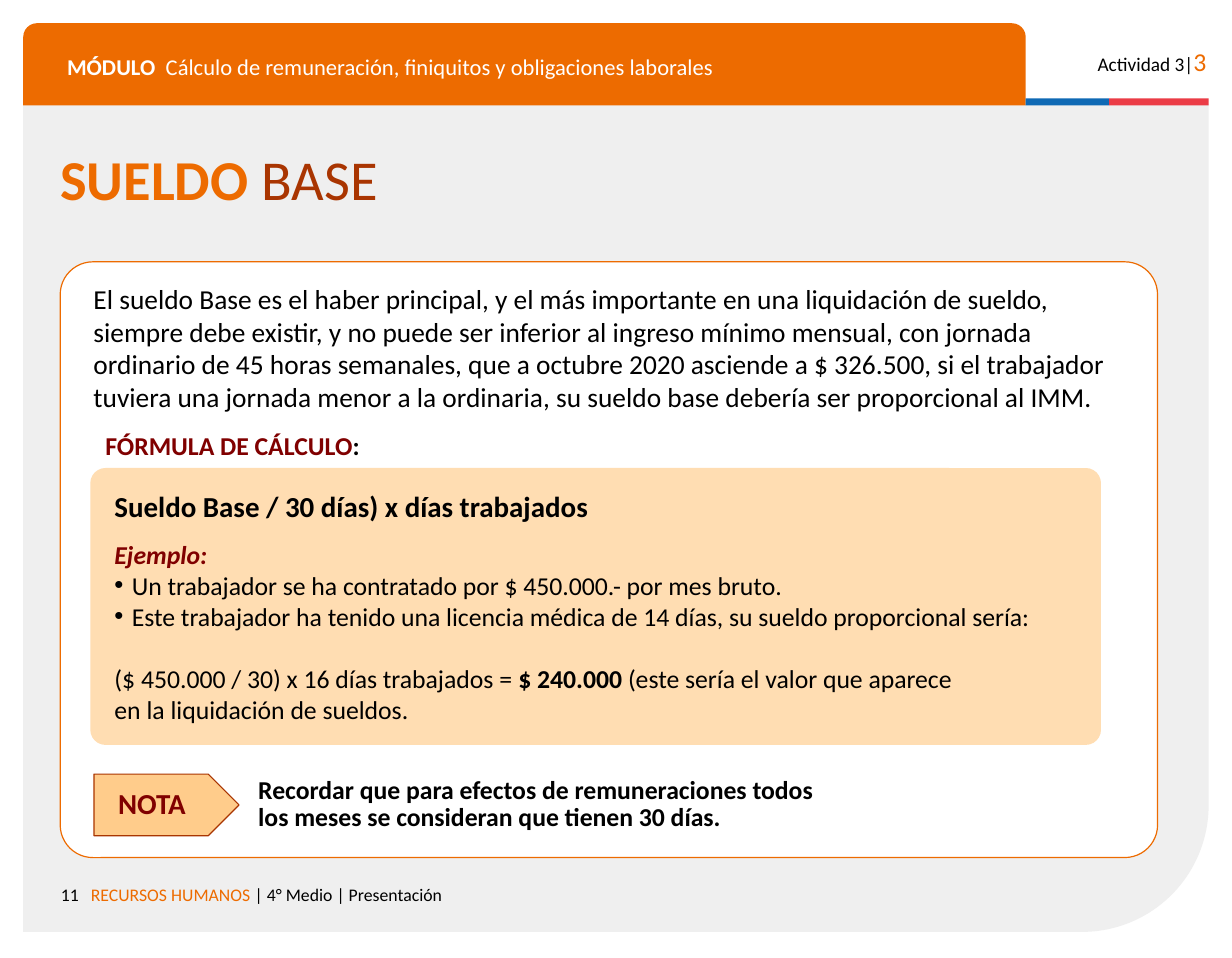
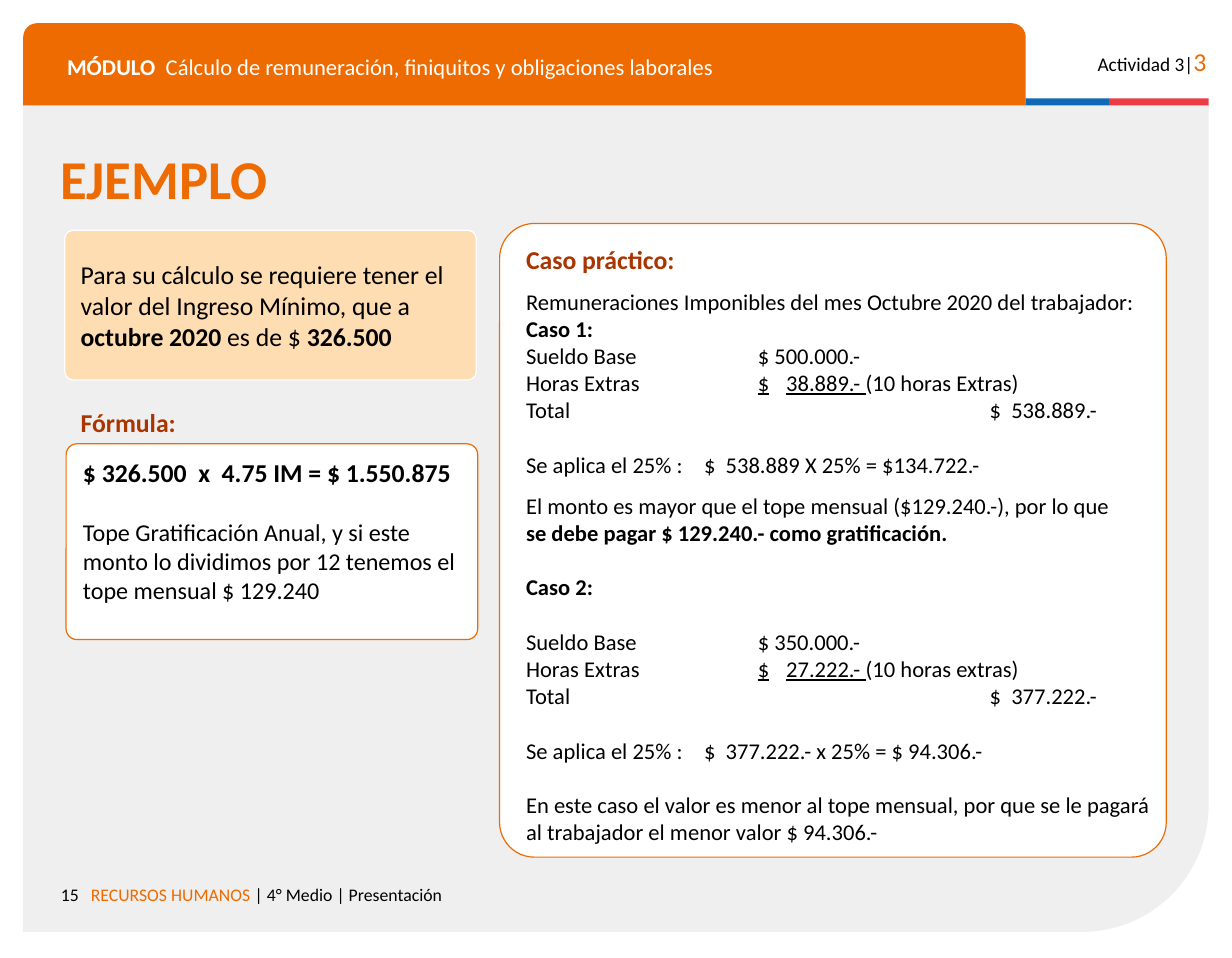
from dataclasses import dataclass

from lxml import etree
from pptx import Presentation
from pptx.dml.color import RGBColor
from pptx.enum.shapes import MSO_SHAPE
from pptx.enum.text import MSO_ANCHOR, PP_ALIGN
from pptx.oxml.ns import qn
from pptx.util import Cm, Pt

RECTANGLE = MSO_SHAPE.RECTANGLE
ROUNDED = MSO_SHAPE.ROUNDED_RECTANGLE
ONE_ROUND_CORNER = MSO_SHAPE.ROUND_1_RECTANGLE
TWO_ROUND_CORNERS = MSO_SHAPE.ROUND_2_SAME_RECTANGLE
PENTAGON = MSO_SHAPE.PENTAGON
LEFT, RIGHT = PP_ALIGN.LEFT, PP_ALIGN.RIGHT
TOP, MIDDLE = MSO_ANCHOR.TOP, MSO_ANCHOR.MIDDLE

FONT = "Calibri"
COLORS = {
    "black": "000000", "white": "FFFFFF", "gray": "EFEFEF",
    "orange": "ED6B00", "rust": "A93501", "maroon": "800000",
    "peach": "FFDDB2", "apricot": "FFCC8B", "blue": "0F69B4", "red": "EB3C46",
}
BREAK = "\n"
BULLET_INDENT = 0.38
PANEL_CORNER = 0.055
AMOUNT_STOP, DIGITS_STOP, RATE_STOP, TOTAL_STOP = 5.08, 5.7, 3.9, 10.16


@dataclass(frozen=True)
class Box:
    left: float
    top: float
    width: float
    height: float

    def lengths(self) -> tuple:
        return Cm(self.left), Cm(self.top), Cm(self.width), Cm(self.height)


@dataclass(frozen=True)
class Run:
    text: str
    size: float = 16
    color: str = "black"
    bold: bool = False
    italic: bool = False
    underline: bool = False


@dataclass(frozen=True)
class Line:
    runs: tuple
    before: float = 0
    spacing: float = 1
    align: int = LEFT
    bullet: bool = False
    stops: tuple = ()


@dataclass(frozen=True)
class Figure:
    kind: int
    box: Box
    fill: str
    line: str = ""
    adjustments: tuple = ()
    flipped: bool = False


@dataclass(frozen=True)
class Case:
    base: str
    extras: str
    extras_note: str
    total: str
    rate: str
    before: float = 0


# Drawing
def add_figure(slide, figure: Figure) -> None:
    shape = slide.shapes.add_shape(figure.kind, *figure.box.lengths())
    shape.shadow.inherit = False
    shape.fill.solid()
    shape.fill.fore_color.rgb = RGBColor.from_string(COLORS[figure.fill])
    if figure.line:
        shape.line.color.rgb = RGBColor.from_string(COLORS[figure.line])
        shape.line.width = Pt(0.75)
    else:
        shape.line.fill.background()
    for index, value in enumerate(figure.adjustments):
        shape.adjustments[index] = value
    if figure.flipped:
        shape._element.spPr.xfrm.set("flipV", "1")


def add_panel(slide, box: Box, fill: str, line: str = "") -> None:
    add_figure(slide, Figure(ROUNDED, box, fill, line, (PANEL_CORNER,)))


def add_run(paragraph, item: Run) -> None:
    run = paragraph.add_run()
    run.text = item.text
    font = run.font
    font.name, font.size = FONT, Pt(item.size)
    font.bold, font.italic, font.underline = item.bold, item.italic, item.underline
    font.color.rgb = RGBColor.from_string(COLORS[item.color])


def format_paragraph(paragraph, line: Line) -> None:
    paragraph.alignment = line.align
    paragraph.line_spacing = line.spacing
    paragraph.space_before = Pt(line.before)
    properties = paragraph._p.get_or_add_pPr()
    if line.bullet:
        properties.set("marL", str(Cm(BULLET_INDENT)))
        properties.set("indent", str(-Cm(BULLET_INDENT)))
        etree.SubElement(properties, qn("a:buFont"), typeface="Arial")
        etree.SubElement(properties, qn("a:buChar"), char="•")
    if line.stops:
        tabs = etree.SubElement(properties, qn("a:tabLst"))
        for stop in line.stops:
            etree.SubElement(tabs, qn("a:tab"), pos=str(Cm(stop)), algn="l")


def add_text(slide, box: Box, *lines: Line, inset: float = 0.13, anchor: int = TOP) -> None:
    frame = slide.shapes.add_textbox(*box.lengths()).text_frame
    frame.word_wrap = True
    frame.vertical_anchor = anchor
    frame.margin_left = frame.margin_right = Cm(0.25)
    frame.margin_top = frame.margin_bottom = Cm(inset)
    for index, line in enumerate(lines):
        paragraph = frame.add_paragraph() if index else frame.paragraphs[0]
        format_paragraph(paragraph, line)
        for item in line.runs:
            if item.text == BREAK:
                paragraph.add_line_break()
            else:
                add_run(paragraph, item)


# Shared page: background, header band, footer and title
FRAME = (
    Figure(ONE_ROUND_CORNER, Box(0.51, 2.29, 25.98, 18.14), "gray",
           adjustments=(0.153,), flipped=True),
    Figure(TWO_ROUND_CORNERS, Box(0.51, 0.51, 21.97, 1.8), "orange", adjustments=(0.167, 0)),
    Figure(RECTANGLE, Box(22.48, 2.16, 1.83, 0.15), "blue"),
    Figure(RECTANGLE, Box(24.31, 2.16, 2.18, 0.15), "red"),
)


def add_page(presentation, number: int, *title: Run):
    slide = presentation.slides.add_slide(presentation.slide_layouts[6])
    for figure in FRAME:
        add_figure(slide, figure)
    add_text(slide, Box(0.51, 19.13, 1.47, 0.74),
             Line((Run(str(number), 11),), align=RIGHT), inset=0.25)
    add_text(slide, Box(1.74, 19.13, 17, 0.97),
             Line((Run("RECURSOS HUMANOS ", 11, "orange"),
                   Run("| 4° Medio | Presentación", 11))), inset=0.25)
    add_text(slide, Box(23.44, 0.76, 3.25, 0.97),
             Line((Run("Actividad 3|", 12), Run("3", 16, "orange")), align=RIGHT), inset=0.25)
    add_text(slide, Box(1.22, 0.97, 20.68, 0.89),
             Line((Run("MÓDULO  ", 14, "white", bold=True),
                   Run("Cálculo de remuneración, finiquitos y obligaciones laborales",
                       14, "white")), spacing=0.9), inset=0.25)
    add_text(slide, Box(1.07, 3.43, 25.93, 1.37), Line(title, spacing=0.7))
    return slide


# Base salary
def build_base_salary(presentation) -> None:
    slide = add_page(presentation, 11, Run("SUELDO ", 35, "orange", bold=True),
                     Run("BASE", 35, "rust"))
    add_panel(slide, Box(1.32, 5.74, 24.05, 13.06), "white", "orange")
    add_text(slide, Box(1.8, 6.05, 23.14, 3.18), Line((Run(
        "El sueldo Base es el haber principal, y el más importante en una liquidación de "
        "sueldo, siempre debe existir, y no puede ser inferior al ingreso mínimo mensual, "
        "con jornada ordinario de 45 horas semanales, que a octubre 2020 asciende a "
        "$ 326.500, si el trabajador tuviera una jornada menor a la ordinaria, su sueldo "
        "base debería ser proporcional al IMM.", 17),)))

    # Formula and worked example
    add_panel(slide, Box(1.98, 10.26, 22.15, 6.07), "peach")
    add_text(
        slide, Box(2.26, 10.57, 21.69, 5.46),
        Line((Run("Sueldo Base / 30 días) x días trabajados", 18, bold=True),)),
        Line((Run("Ejemplo:", color="maroon", bold=True, italic=True),), before=9.8),
        Line((Run("Un trabajador se ha contratado por $ 450.000.- por mes bruto."),),
             bullet=True),
        Line((Run("Este trabajador ha tenido una licencia médica de 14 días, "
                  "su sueldo proporcional sería:"),), bullet=True),
        Line((Run("($ 450.000 / 30) x 16 días trabajados = "),
              Run("$ 240.000 ", bold=True),
              Run("(este sería el valor que aparece "), Run(BREAK),
              Run("en la liquidación de sueldos.")), before=19.5),
    )
    add_text(slide, Box(2.06, 9.3, 6.17, 0.94),
             Line((Run("FÓRMULA DE CÁLCULO", color="maroon", bold=True), Run(":", bold=True))))

    # Note
    add_text(slide, Box(5.41, 16.41, 13, 2.46),
             Line((Run("Recordar que para efectos de remuneraciones todos los meses se "
                       "consideran que tienen 30 días.", bold=True),), spacing=0.9),
             anchor=MIDDLE)
    add_figure(slide, Figure(PENTAGON, Box(2.06, 16.97, 3.18, 1.35), "apricot", "rust", (0.5,)))
    add_text(slide, Box(2.34, 17.09, 2.08, 1.02),
             Line((Run("NOTA", 18, "maroon", bold=True),)))


# Practical case
def case_lines(case: Case) -> tuple:
    return (
        Line((Run(f"Sueldo Base\t{case.base}", 14),), before=case.before, stops=(AMOUNT_STOP,)),
        Line((Run("Horas Extras\t", 14), Run(f"$\t{case.extras} ", 14, underline=True),
              Run(case.extras_note, 14)), stops=(AMOUNT_STOP, DIGITS_STOP)),
        Line((Run(f"Total\t{case.total}", 14),), stops=(TOTAL_STOP,)),
        Line((Run(f"Se aplica el 25% :\t{case.rate}", 14),), before=17.1, stops=(RATE_STOP,)),
    )


def build_example(presentation) -> None:
    slide = add_page(presentation, 15, Run("EJEMPLO", 34, "orange", bold=True))
    add_panel(slide, Box(1.42, 5.05, 9.02, 3.28), "peach", "white")
    add_panel(slide, Box(1.45, 9.73, 9.02, 4.29), "white", "orange")
    add_panel(slide, Box(10.95, 4.9, 14.61, 13.89), "white", "orange")

    first = Case("$ 500.000.-", "38.889.-", "(10 horas Extras)", "$  538.889.-",
                 "$  538.889 X 25% = $134.722.-")
    second = Case("$ 350.000.-", "27.222.-", "(10 horas extras)", "$  377.222.-",
                  "$  377.222.- x 25% = $ 94.306.-", before=17.1)
    add_text(
        slide, Box(11.28, 5.21, 14.43, 13.51),
        Line((Run("Caso práctico:", color="rust", bold=True),)),
        Line((Run("Remuneraciones Imponibles del mes Octubre 2020 del trabajador:", 14),),
             before=8.5),
        Line((Run("Caso 1:", 14, bold=True),)),
        *case_lines(first),
        Line((Run("El monto es mayor que el tope mensual ($129.240.-), por lo que ", 14),
              Run(BREAK),
              Run("se debe pagar $ 129.240.- como gratificación.", 14, bold=True)), before=8.5),
        Line((Run("Caso 2:", 14, bold=True),), before=17.1),
        *case_lines(second),
        Line((Run("En este caso el valor es menor al tope mensual, por que se le pagará "
                  "al trabajador el menor valor $ 94.306.-", 14),), before=17.1),
    )

    # Left column: formula and minimum income
    add_text(slide, Box(1.52, 8.79, 4.34, 0.94),
             Line((Run("Fórmula:", color="rust", bold=True),)))
    add_text(slide, Box(1.57, 9.88, 9.07, 3.51),
             Line((Run("$ 326.500  x  4.75 IM = $ 1.550.875", bold=True),)),
             Line((Run("Tope Gratificación Anual, y si este monto lo dividimos por 12 "
                       "tenemos el tope mensual $ 129.240", 15),), before=18.3))
    add_text(slide, Box(1.52, 5.54, 9.12, 2.31),
             Line((Run("Para su cálculo se requiere tener el valor del Ingreso Mínimo, que a "),
                   Run("octubre 2020 ", bold=True), Run("es de $ "),
                   Run("326.500", bold=True))))


def main() -> None:
    presentation = Presentation()
    presentation.slide_width, presentation.slide_height = Cm(27), Cm(21)
    build_base_salary(presentation)
    build_example(presentation)
    presentation.save("out.pptx")


if __name__ == "__main__":
    main()
